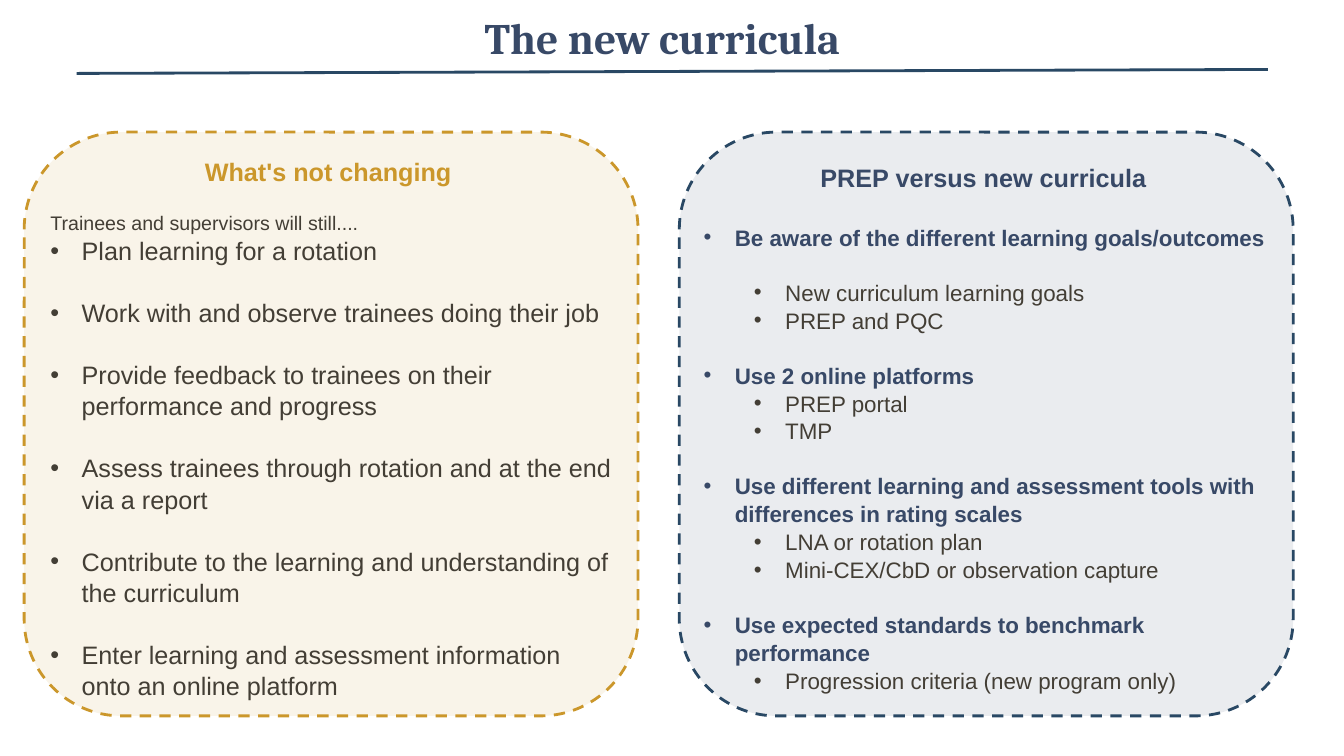
import pptx
import pptx.util
import pptx.dml.color
import pptx.enum.dml
import pptx.enum.shapes
import pptx.enum.text
import pptx.oxml.ns
import lxml.etree

Cm, Pt = pptx.util.Cm, pptx.util.Pt
CENTER = pptx.enum.text.PP_ALIGN.CENTER
qn = pptx.oxml.ns.qn
NAVY, GOLD, EDGE, DARK = "384967", "CB972B", "294864", "433E35"


def color(code):
    return pptx.dml.color.RGBColor.from_string(code)


def style(para, text, size, code, bold=False, gap=0, name="Arial"):
    """Fill a paragraph; gap is the space before it in points."""
    para.text = text
    para.space_before = Pt(gap)
    font = para.font
    font.name, font.size, font.bold = name, Pt(size), bold
    font.color.rgb = color(code)


deck = pptx.Presentation()
deck.slide_width, deck.slide_height = Cm(33.87), Cm(19.05)
slide = deck.slides.add_slide(deck.slide_layouts[6])
shapes = slide.shapes

title = shapes.add_textbox(Cm(1.45), Cm(0), Cm(30.48), Cm(1.85)).text_frame
title.word_wrap = True
title.vertical_anchor = pptx.enum.text.MSO_ANCHOR.MIDDLE
style(title.paragraphs[0], "The new curricula", 31, NAVY, True, name="Cambria")
title.paragraphs[0].alignment = CENTER

rule = shapes.add_connector(pptx.enum.shapes.MSO_CONNECTOR.STRAIGHT,
                            Cm(1.93), Cm(1.85), Cm(31.95), Cm(1.75))
rule.line.color.rgb = color(EDGE)
rule.line.width = Pt(2)
lxml.etree.SubElement(rule.element.spPr, qn("a:effectLst"))

# Each item: kind, text, space before
same = [
    ("intro", "Trainees and supervisors will still....", 16.6),
    ("plain", "Plan learning for a rotation", 0),
    ("plain", "Work with and observe trainees doing their job", 21.8),
    ("plain", "Provide feedback to trainees on their performance and progress", 21.8),
    ("plain", "Assess trainees through rotation and at the end via a report", 21.8),
    ("plain", "Contribute to the learning and understanding of the curriculum", 21.8),
    ("plain", "Enter learning and assessment information onto an online platform", 21.8),
]
new = [
    ("main", "Be aware of the different learning goals/outcomes", 21.5),
    ("sub", "New curriculum learning goals", 19.3),
    ("sub", "PREP and PQC", 0),
    ("main", "Use 2 online platforms", 19.3),
    ("sub", "PREP portal", 0),
    ("sub", "TMP", 0),
    ("main", "Use different learning and assessment tools with differences in rating scales", 19.3),
    ("sub", "LNA or rotation plan", 0),
    ("sub", "Mini-CEX/CbD or observation capture", 0),
    ("main", "Use expected standards to benchmark performance", 19.3),
    ("sub", "Progression criteria (new program only)", 0),
]
# Kind: size, colour, bold, left margin in cm (0 means no bullet), level
kinds = {
    "intro": (14, DARK, False, 0, 0),
    "plain": (18, DARK, False, 0.79, 0),
    "main": (16, NAVY, True, 0.79, 0),
    "sub": (16, DARK, False, 2.06, 1),
}
panels = [
    (0.61, GOLD, GOLD, 1.02, 3.78, 14.68, "What's not changing ", same),
    (17.12, NAVY, EDGE, 17.48, 3.94, 14.78, "PREP versus new curricula ", new),
]

for left, tint, edge, x, y, width, head, items in panels:
    panel = shapes.add_shape(pptx.enum.shapes.MSO_SHAPE.ROUNDED_RECTANGLE,
                             Cm(left), Cm(3.33), Cm(15.47), Cm(14.71))
    panel.shadow.inherit = False
    panel.fill.solid()
    panel.fill.fore_color.rgb = color(tint)
    fill = panel.element.spPr.find(qn("a:solidFill"))
    lxml.etree.SubElement(fill[0], qn("a:alpha"), val="10000")
    panel.line.color.rgb = color(edge)
    panel.line.width = Pt(2)
    panel.line.dash_style = pptx.enum.dml.MSO_LINE.DASH

    frame = shapes.add_textbox(Cm(x), Cm(y), Cm(width), Cm(13.6)).text_frame
    frame.word_wrap = True
    first = frame.paragraphs[0]
    first.alignment = CENTER
    first.line_spacing = 1.04
    style(first, head, 18, tint, True)
    for kind, text, gap in items:
        size, code, bold, inset, level = kinds[kind]
        para = frame.add_paragraph()
        para.level = level
        para.line_spacing = 1.04
        para.space_before = Pt(gap)
        if inset:
            props = para._p.get_or_add_pPr()
            props.set("marL", str(Cm(inset)))
            props.set("indent", str(-Cm(0.79)))
            lxml.etree.SubElement(props, qn("a:buFont"), typeface="Arial")
            lxml.etree.SubElement(props, qn("a:buChar"), char="•")
        style(para, text, size, code, bold, gap)

deck.save("out.pptx")
